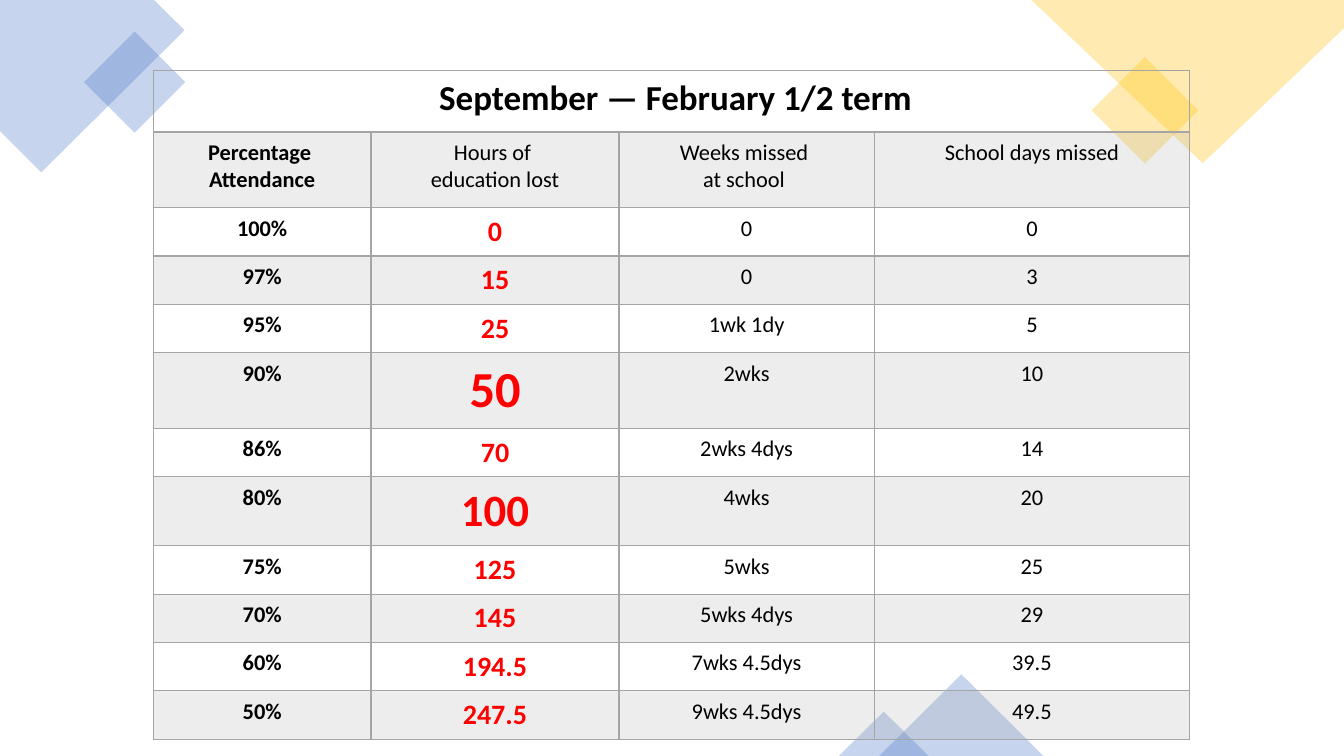
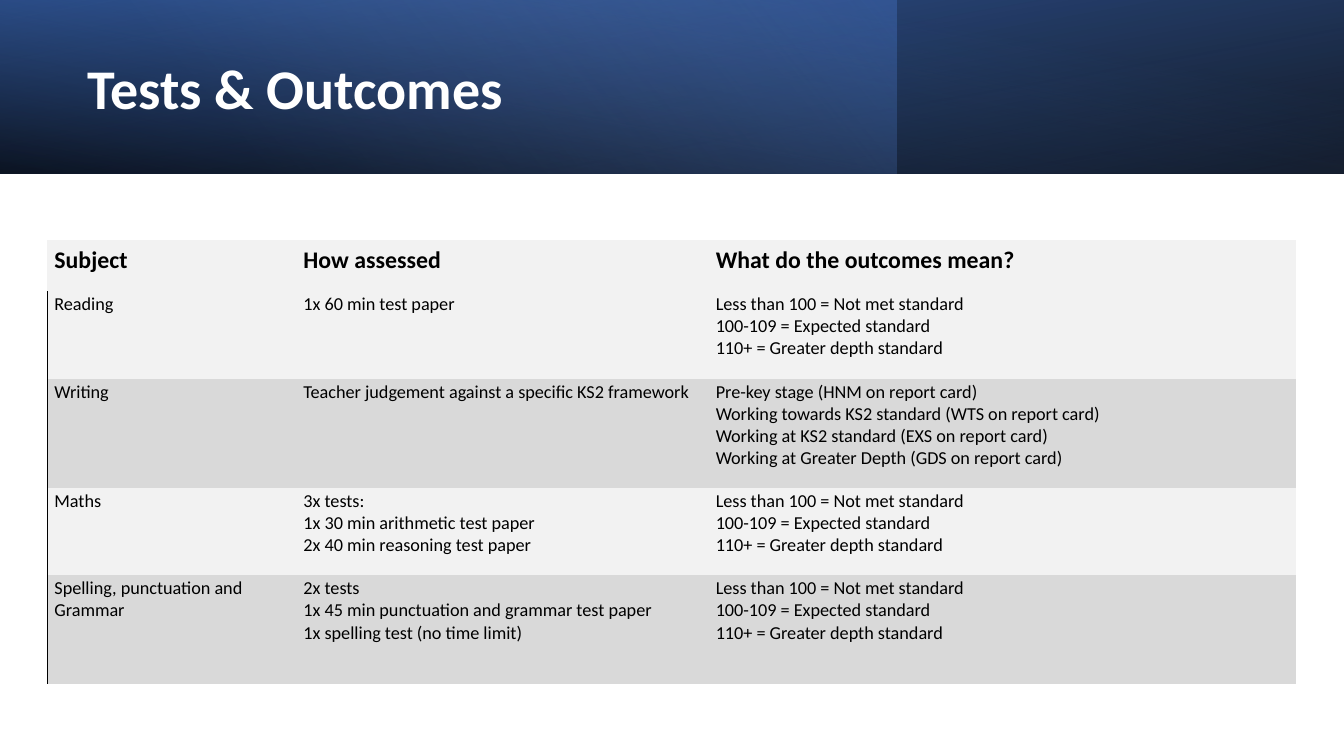
from pptx import Presentation
from pptx.dml.color import RGBColor
from pptx.enum import shapes, text
from pptx.oxml.ns import qn
from pptx.oxml.xmlchemy import OxmlElement
from pptx.util import Inches, Pt

FONT = "Calibri"
NO_STYLE = "{2D5ABB26-0587-4C30-8999-92F81FD0307C}"
COLOURS = {
    "black": "000000", "white": "FFFFFF", "red": "FF0000", "grey": "A5A5A5",
    "blue": "4472C4", "navy": "2F5597", "sky": "8FAADC", "gold": "FFC000",
    "light": "F2F2F2", "dark": "D9D9D9",
}

# Attendance slide
CORNERS = [
    ("blue", [(1.53, 0), (0, 0), (0, 1.3), (0.41, 1.71), (1.83, 0.3)]),
    ("gold", [(13.33, 0), (10.23, 0), (11.93, 1.62), (13.33, 0.28)]),
]
# kind, colour, rotation, (left, top, width, height)
ACCENTS = [
    ("RECTANGLE", "blue", 45, (0.98, 0.46, 0.71, 0.71)),
    ("RECTANGLE", "gold", 45, (10.98, 0.72, 0.75, 0.75)),
    ("ISOSCELES_TRIANGLE", "blue", 0, (8.72, 6.69, 1.63, 0.81)),
    ("ISOSCELES_TRIANGLE", "blue", 0, (8.32, 7.06, 0.89, 0.44)),
]
TERM = " September — February 1/2 term"
ATTENDANCE_HEADS = ["Percentage \nAttendance", "Hours of \neducation lost",
                    "Weeks missed \nat school ", "School days missed"]
ATTENDANCE = [
    ("100%", "0", "0", "0"),
    ("97%", "15", "0", "3"),
    ("95%", "25", "1wk 1dy", "5"),
    ("90%", "50", "2wks", "10"),
    ("86%", "70", "2wks 4dys", "14"),
    ("80%", "100", "4wks", "20"),
    ("75%", "125", "5wks", "25"),
    ("70%", "145", "5wks 4dys", "29"),
    ("60%", "194.5", "7wks 4.5dys", "39.5"),
    ("50%", "247.5", "9wks 4.5dys", "49.5"),
]
EMPHASIS = {"50": (36, 0.74), "100": (32, 0.67)}  # hours: text size, row height
PLAIN_ROW = (20, 0.47)

# Tests slide
SCORES = ("Less than 100 = Not met standard\n100-109 = Expected standard\n"
          "110+ = Greater depth standard")
TESTS = [
    ("Subject", "How assessed", "What do the outcomes mean?"),
    ("Reading", "1x 60 min test paper", SCORES),
    ("Writing", "Teacher judgement against a specific KS2 framework",
     "Pre-key stage (HNM on report card)\n"
     "Working towards KS2 standard (WTS on report card)\n"
     "Working at KS2 standard (EXS on report card)\n"
     "Working at Greater Depth (GDS on report card)"),
    ("Maths", "3x tests:\n1x 30 min arithmetic test paper\n"
     "2x 40 min reasoning test paper", SCORES),
    ("Spelling, punctuation and Grammar",
     "2x tests\n1x 45 min punctuation and grammar test paper\n"
     "1x spelling test (no time limit)", SCORES),
]
# width, rotation, flipped, clockwise angle, stops of (position, colour, opacity)
BANDS = [
    (13.33, 180, True, 100, [(0, "black", 96), (1, "navy", 100)]),
    (8.89, 0, False, 140, [(0, "blue", 41), (0.74, "sky", 0)]),
    (13.33, 0, True, 260, [(0, "black", 63), (0.78, "blue", 15)]),
]


def rgb(name):
    return RGBColor.from_string(COLOURS[name])


def set_opacity(colour_element, percent):
    alpha = OxmlElement("a:alpha")
    alpha.set("val", str(percent * 1000))
    colour_element.append(alpha)


def fill_solid(fill, colour, opacity=100):
    fill.solid()
    fill.fore_color.rgb = rgb(colour)
    if opacity < 100:
        solid = fill._xPr.find(qn("a:solidFill"))
        set_opacity(solid.find(qn("a:srgbClr")), opacity)


def fill_gradient(fill, angle, stops):
    fill.gradient()
    fill.gradient_angle = 360 - angle
    for stop, (position, colour, _) in zip(fill.gradient_stops, stops):
        stop.position = position
        stop.color.rgb = rgb(colour)
    gradient = fill._xPr.find(qn("a:gradFill"))
    for element, (_, _, opacity) in zip(gradient.iter(qn("a:srgbClr")), stops):
        set_opacity(element, opacity)


def strip_outline(shape):
    shape.shadow.inherit = False
    shape.line.fill.background()


def add_preset(page, kind, left, top, width, height, rotation=0):
    shape = page.shapes.add_shape(
        getattr(shapes.MSO_SHAPE, kind),
        Inches(left), Inches(top), Inches(width), Inches(height))
    shape.rotation = rotation
    strip_outline(shape)
    return shape


def write(frame, content, size, bold=False, colour="black",
          align=text.PP_ALIGN.LEFT, spacing=None):
    for index, line in enumerate(content.split("\n")):
        para = frame.add_paragraph() if index else frame.paragraphs[0]
        para.alignment = align
        if spacing:
            para.line_spacing = spacing
        span = para.add_run()
        span.text = line
        span.font.name, span.font.size = FONT, Pt(size)
        span.font.bold, span.font.color.rgb = bold, rgb(colour)


def add_grid(page, left, top, widths, heights, margins):
    """Add an unstyled table; margins run left, top, right, bottom."""
    table = page.shapes.add_table(
        len(heights), len(widths), Inches(left), Inches(top),
        Inches(sum(widths)), Inches(sum(heights))).table
    table.first_row = table.horz_banding = False
    table._tbl.tblPr.find(qn("a:tableStyleId")).text = NO_STYLE
    for column, width in zip(table.columns, widths):
        column.width = Inches(width)
    for row, height in zip(table.rows, heights):
        row.height = Inches(height)
    for cell in table.iter_cells():
        (cell.margin_left, cell.margin_top,
         cell.margin_right, cell.margin_bottom) = map(Inches, margins)
    return table


def set_borders(cell, colour, **widths):
    """Draw the given sides (L, R, T, B); call before filling the cell."""
    properties = cell._tc.get_or_add_tcPr()
    for side in "LRTB":
        if side not in widths:
            continue
        line = OxmlElement(f"a:ln{side}")
        line.set("w", str(Pt(widths[side])))
        solid = OxmlElement("a:solidFill")
        value = OxmlElement("a:srgbClr")
        value.set("val", COLOURS[colour])
        solid.append(value)
        line.append(solid)
        properties.append(line)


def build_attendance(deck):
    page = deck.slides.add_slide(deck.slide_layouts[6])
    for colour, points in CORNERS:
        start, *others = [(Inches(x), Inches(y)) for x, y in points]
        builder = page.shapes.build_freeform(*start)
        builder.add_line_segments(others, close=True)
        corner = builder.convert_to_shape()
        strip_outline(corner)
        fill_solid(corner.fill, colour, 30)
    for kind, colour, rotation, place in ACCENTS:
        accent = add_preset(page, kind, *place, rotation)
        fill_solid(accent.fill, colour, 30)

    emphasis = [EMPHASIS.get(row[1], PLAIN_ROW) for row in ATTENDANCE]
    heights = [0.61, 0.75] + [height for _, height in emphasis]
    table = add_grid(page, 1.52, 0.7, [2.16, 2.46, 2.53, 3.13], heights, [0.07] * 4)
    for r, row in enumerate(table.rows):
        for cell in row.cells:
            set_borders(cell, "grey", L=1, R=1, T=2 if r == 1 else 1,
                        B=2 if r == 0 else 1)
            if r % 2:
                fill_solid(cell.fill, "grey", 20)
            else:
                cell.fill.background()

    centre = text.PP_ALIGN.CENTER
    table.cell(0, 0).merge(table.cell(0, 3))
    write(table.cell(0, 0).text_frame, TERM, 25, True, align=centre)
    for r, values in enumerate([ATTENDANCE_HEADS] + ATTENDANCE, 1):
        for c, value in enumerate(values):
            size, bold, colour = 16, c == 0, "black"
            if r > 1 and c == 1:
                size, bold, colour = emphasis[r - 2][0], True, "red"
            write(table.cell(r, c).text_frame, value, size, bold, colour, centre)


def build_tests(deck):
    page = deck.slides.add_slide(deck.slide_layouts[5])
    for width, rotation, flipped, angle, stops in BANDS:
        band = add_preset(page, "RECTANGLE", 0, 0, width, 1.72, rotation)
        if flipped:
            band._element.spPr.find(qn("a:xfrm")).set("flipH", "1")
        fill_gradient(band.fill, angle, stops)

    title = page.shapes.title
    page.shapes._spTree.append(title._element)  # in front of the bands
    title.left, title.top = Inches(0.77), Inches(0.27)
    title.width, title.height = Inches(7.72), Inches(1.27)
    title.text_frame.auto_size = text.MSO_AUTO_SIZE.NONE
    title.text_frame.vertical_anchor = text.MSO_ANCHOR.MIDDLE
    write(title.text_frame, "Tests & Outcomes", 40, True, "white", spacing=0.9)

    table = add_grid(page, 0.47, 2.38, [2.47, 4.09, 5.82],
                     [0.51, 0.87, 1.08, 0.87, 1.08], [0.07, 0.02, 0.11, 0.16])
    for r, values in enumerate(TESTS):
        head = r == 0
        for c, value in enumerate(values):
            cell = table.cell(r, c)
            if c == 0 and not head:
                set_borders(cell, "black", L=1)
            fill_solid(cell.fill, "light" if head or r % 2 else "dark")
            cell.vertical_anchor = (text.MSO_ANCHOR.BOTTOM if head
                                    else text.MSO_ANCHOR.TOP)
            write(cell.text_frame, value, 17 if head else 13, head)


def main():
    deck = Presentation()
    deck.slide_width, deck.slide_height = Inches(13.33), Inches(7.5)
    build_attendance(deck)
    build_tests(deck)
    deck.save("out.pptx")


if __name__ == "__main__":
    main()
